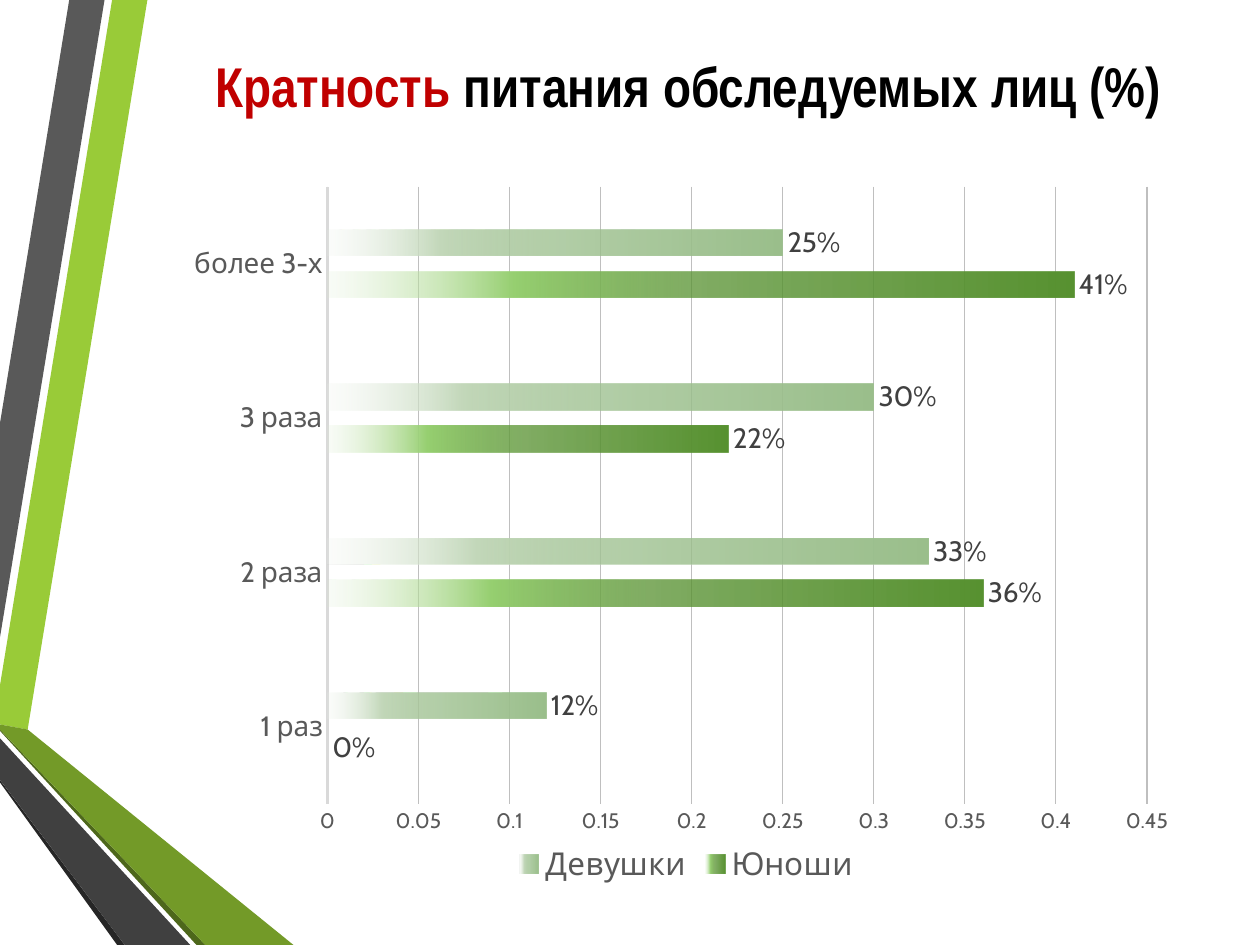
from dataclasses import dataclass

from lxml import etree
from pptx import Presentation
from pptx.chart.data import CategoryChartData
from pptx.dml.color import RGBColor
from pptx.enum.chart import XL_CHART_TYPE, XL_LABEL_POSITION, XL_LEGEND_POSITION, XL_TICK_MARK
from pptx.enum.text import MSO_ANCHOR, PP_ALIGN
from pptx.oxml import parse_xml
from pptx.oxml.ns import nsdecls, qn
from pptx.util import Inches, Pt

BARS = XL_CHART_TYPE.BAR_CLUSTERED
OUTSIDE = XL_LABEL_POSITION.OUTSIDE_END
BOTTOM = XL_LEGEND_POSITION.BOTTOM
NO_TICK = XL_TICK_MARK.NONE
TOP = MSO_ANCHOR.TOP
RIGHT = PP_ALIGN.RIGHT

COLORS = {
    "lime": "99CB38", "gray": "595959", "black": "000000", "red": "C00000",
    "soot": "262626", "moss": "4D671B", "olive": "739A28", "coal": "404040",
    "axis": "D9D9D9", "grid": "BFBFBF",
}
HEAD_FONT, BODY_FONT = "Arial Narrow", "Cabin"


@dataclass
class Band:
    color: str
    points: list[tuple[float, float]]


@dataclass
class Group:
    name: str
    values: list[float]
    stops: list[tuple[int, str, int]]  # position %, colour, opacity %


BANDS = [
    Band("lime", [(0, 5.44), (0, 5.75), (0.22, 5.79), (1.17, 0), (0.89, 0)]),
    Band("gray", [(0.83, 0), (0.55, 0), (0, 3.36), (0, 5.06)]),
    Band("soot", [(0, 6.19), (0, 6.21), (0.93, 7.5), (0.99, 7.5)]),
    Band("moss", [(0, 5.79), (0, 5.8), (1.56, 7.5), (1.63, 7.5)]),
    Band("olive", [(0, 5.79), (1.63, 7.5), (2.33, 7.5), (0.22, 5.79), (0, 5.75)]),
    Band("coal", [(0, 6.19), (0.99, 7.5), (1.51, 7.5), (0, 5.86)]),
]
MEALS = ["1 раз", "2 раза", "3 раза", "более 3-х"]
GROUPS = [
    Group("Юноши", [0, 0.36, 0.22, 0.41],
          [(0, "589231", 100), (51, "589231", 75), (75, "97D071", 100), (100, "DCEFD0", 15)]),
    Group("Девушки", [0.12, 0.33, 0.3, 0.25],
          [(0, "9BBF8C", 100), (51, "9BBF8C", 75), (75, "C3D8BA", 100), (100, "EBF2E8", 15)]),
]


def rgb(name: str) -> RGBColor:
    return RGBColor.from_string(COLORS[name])


def style(font, size: float, color: str, face: str = BODY_FONT, bold: bool = False) -> None:
    font.size, font.name, font.bold = Pt(size), face, bold
    font.color.rgb = rgb(color)


def add_text(para, text: str, **form) -> None:
    run = para.add_run()
    run.text = text
    style(run.font, **form)


def add_band(slide, band: Band) -> None:
    first, *rest = [(Inches(x), Inches(y)) for x, y in band.points]
    pen = slide.shapes.build_freeform(*first)
    pen.add_line_segments(rest, close=True)
    shape = pen.convert_to_shape()
    shape.shadow.inherit = False
    shape.fill.solid()
    shape.fill.fore_color.rgb = rgb(band.color)
    shape.line.fill.background()


def add_title(slide) -> None:
    title = slide.shapes.title
    title.left, title.top = Inches(0), Inches(0.36)
    title.width, title.height = Inches(9.32), Inches(1.11)
    frame = title.text_frame
    frame.word_wrap, frame.vertical_anchor = True, TOP
    para = frame.paragraphs[0]
    para.alignment = RIGHT
    form = {"size": 32, "face": HEAD_FONT, "bold": True}
    add_text(para, "Кратность", color="red", **form)
    add_text(para, " питания обследуемых лиц (%)", color="black", **form)
    title.element.getparent().append(title.element)  # in front of the bands


def fade(fill, stops: list[tuple[int, str, int]]) -> None:
    """Fill with a gradient from right to left."""
    fill.gradient()
    fill.gradient_angle = 180
    grad = fill.gradient_stops[0].color
    marks = "".join(
        f'<a:gs pos="{pos * 1000}"><a:srgbClr val="{color}">'
        f'<a:alpha val="{alpha * 1000}"/></a:srgbClr></a:gs>'
        for pos, color, alpha in stops
    )
    new = parse_xml(
        f'<a:gradFill {nsdecls("a")} rotWithShape="1"><a:gsLst>{marks}</a:gsLst>'
        '<a:lin ang="10800000" scaled="0"/></a:gradFill>'
    )
    return new


def paint(series, group: Group) -> None:
    series.format.fill.solid()
    series.format.line.fill.background()
    series.invert_if_negative = False
    props = series.format.fill
    new = fade(props, group.stops)
    old = series._element.find(qn("c:spPr")).find(qn("a:gradFill"))
    old.getparent().replace(old, new)
    labels = series.data_labels
    labels.show_value, labels.position = True, OUTSIDE
    labels.number_format, labels.number_format_is_linked = "0%", False
    style(labels.font, 16, "coal")


def place_plot(chart, x: float, y: float, w: float, h: float) -> None:
    """Set the inner plot area as shares of the chart frame."""
    area = chart._chartSpace.find(".//" + qn("c:plotArea"))
    for old in area.findall(qn("c:layout")):
        area.remove(old)
    layout = etree.Element(qn("c:layout"))
    box = etree.SubElement(layout, qn("c:manualLayout"))
    parts = {"layoutTarget": "inner", "xMode": "edge", "yMode": "edge",
             "x": x, "y": y, "w": w, "h": h}
    for tag, val in parts.items():
        etree.SubElement(box, qn(f"c:{tag}")).set("val", str(val))
    area.insert(0, layout)


def add_bars(slide) -> None:
    data = CategoryChartData(number_format="0%")
    data.categories = MEALS
    for group in GROUPS:
        data.add_series(group.name, group.values)
    chart = slide.shapes.add_chart(
        BARS, Inches(1.54), Inches(1.47), Inches(7.78), Inches(5.59), data
    ).chart
    chart.has_title = False
    style(chart.font, 10, "black")

    plot = chart.plots[0]
    plot.gap_width, plot.overlap = 326, -58
    plot.vary_by_categories = False
    for series, group in zip(plot.series, GROUPS):
        paint(series, group)

    cats, vals = chart.category_axis, chart.value_axis
    for axis, size in ((cats, 16), (vals, 12)):
        axis.major_tick_mark = axis.minor_tick_mark = NO_TICK
        style(axis.tick_labels.font, size, "gray")
    cats.format.line.width = Pt(1.5)
    cats.format.line.color.rgb = rgb("axis")
    vals.format.line.fill.background()
    vals.minimum_scale, vals.maximum_scale, vals.major_unit = 0, 0.45, 0.05
    vals.tick_labels.number_format = "General"
    vals.tick_labels.number_format_is_linked = False
    vals.has_major_gridlines = True
    grid = vals.major_gridlines.format.line
    grid.width = Pt(0.75)
    grid.color.rgb = rgb("grid")

    chart.has_legend = True
    chart.legend.position = BOTTOM
    chart.legend.include_in_layout = False
    style(chart.legend.font, 18, "gray")
    place_plot(chart, 0.133, 0, 0.839, 0.878)


def main() -> None:
    deck = Presentation()
    deck.slide_width, deck.slide_height = Inches(10), Inches(7.5)
    slide = deck.slides.add_slide(deck.slide_layouts[5])
    for band in BANDS:
        add_band(slide, band)
    add_title(slide)
    add_bars(slide)
    deck.save("out.pptx")


if __name__ == "__main__":
    main()
